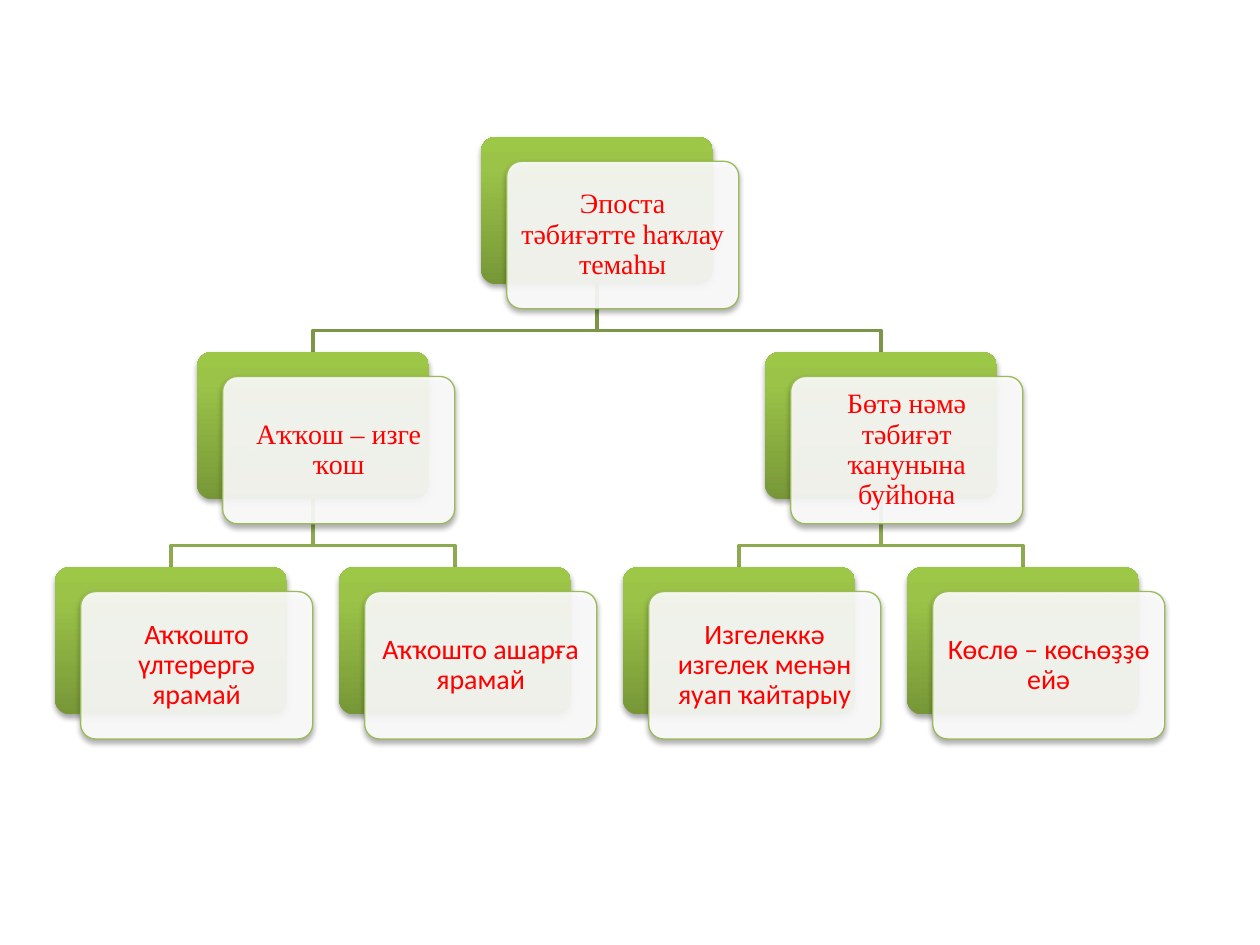
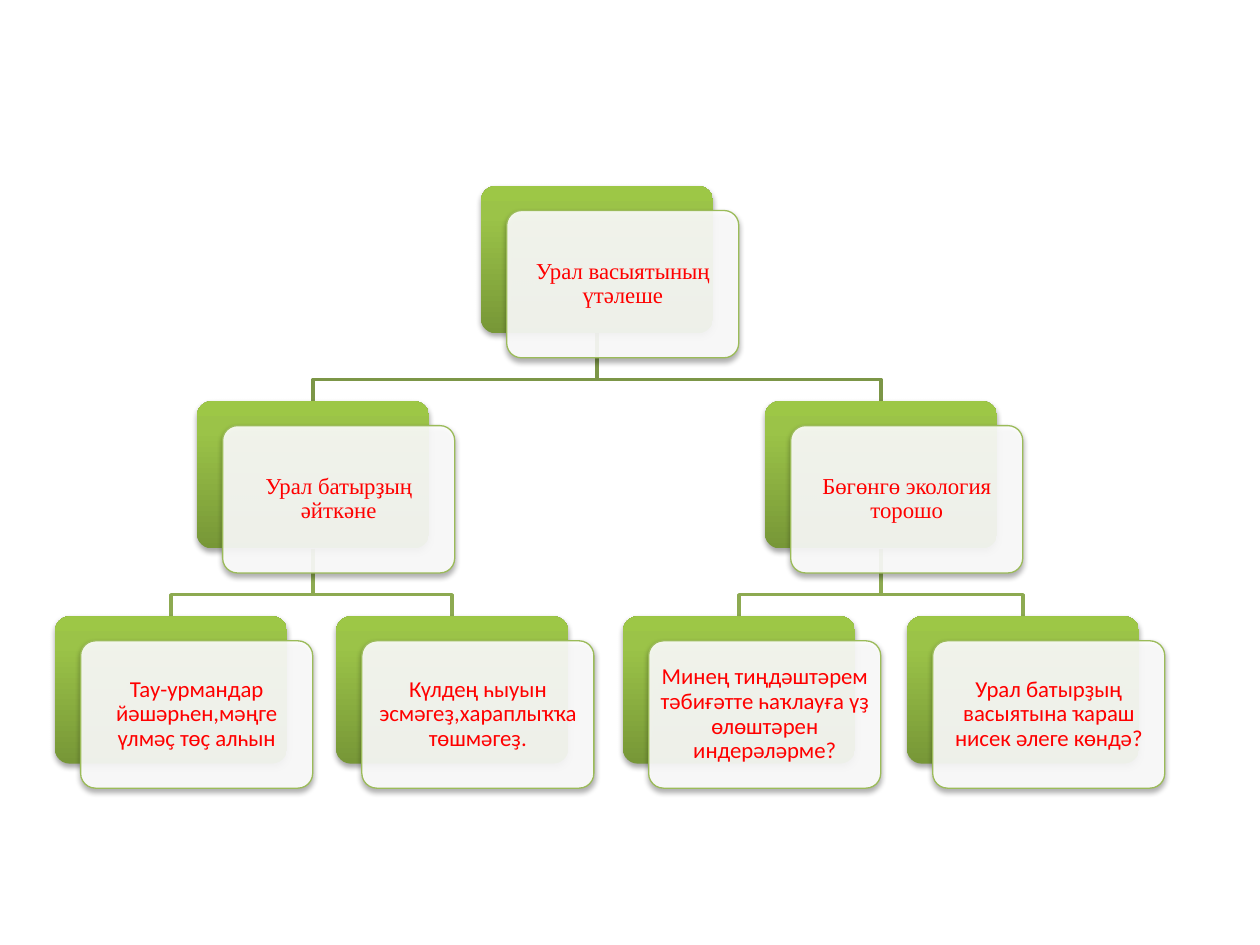
from lxml.etree import SubElement
from pptx import Presentation
from pptx.dml.color import RGBColor
from pptx.enum.shapes import MSO_SHAPE
from pptx.enum.text import MSO_ANCHOR, PP_ALIGN
from pptx.oxml.ns import qn
from pptx.util import Pt

ROUNDED = MSO_SHAPE.ROUNDED_RECTANGLE
MIDDLE = MSO_ANCHOR.MIDDLE
CENTER = PP_ALIGN.CENTER

CARD_WIDTH, CARD_HEIGHT = 132.6, 84.2
SLOT_PITCH, ROW_PITCH = 162.3, 122.95
FRONT_SHIFT_X, FRONT_SHIFT_Y = 14.7, 14
BEND_DROP = 26.4
TREE_LEFT = 31.4

GREEN_STOPS = ((0, "779737"), (80, "9BC348"), (100, "9DC746"))
FRONT_FILL, FRONT_LINE = "FFFFFF", "9BBB59"
TEXT_COLOR, SHADOW_COLOR = "FF0000", "000000"
ROW_LINE_COLORS = ("7C9647", "8DAA51")
ROW_FONTS = ("Times New Roman", "Times New Roman", "Calibri")
PARENT_SLOTS = {1: (1.5, 1.5), 2: (0.5, 0.5, 2.5, 2.5)}

TREES = (
    {
        "top": 78.2,
        "size": 16,
        "slots": ((1.5,), (0.5, 2.5), (0, 1, 2, 3)),
        "rows": (
            ("Эпоста тәбиғәтте һаҡлау темаһы",),
            ("Аҡҡош – изге ҡош", "Бөтә нәмә тәбиғәт ҡанунына буйһона"),
            (
                "Аҡҡошто үлтерергә ярамай",
                "Аҡҡошто ашарға ярамай",
                "Изгелеккә изгелек менән яуап ҡайтарыу",
                "Көслө – көсһөҙҙө ейә",
            ),
        ),
    },
    {
        "top": 106.3,
        "size": 13,
        "slots": ((1.5,), (0.5, 2.5), (0, 0.99, 2, 3)),
        "rows": (
            ("Урал васыятының үтәлеше",),
            ("Урал батырҙың әйткәне", "Бөгөнгө экология торошо"),
            (
                "Тау-урмандар йәшәрһен,мәңге үлмәҫ төҫ алһын",
                "Күлдең һыуын эсмәгеҙ,хараплыҡҡа төшмәгеҙ.",
                "Минең тиңдәштәрем тәбиғәтте һаҡлауға үҙ өлөштәрен индерәләрме?",
                "Урал батырҙың васыятына ҡараш нисек әлеге көндә?",
            ),
        ),
    },
)


def color(value):
    """Turn a hex string into a colour."""
    return RGBColor.from_string(value)


def add_shadow(shape):
    """Give a shape the soft shadow that falls below it."""
    shape.shadow.inherit = False
    effects = shape._element.spPr.find(qn("a:effectLst"))
    shadow = SubElement(effects, qn("a:outerShdw"), blurRad=str(Pt(3.15)),
                        dist=str(Pt(1.8)), dir="5400000", rotWithShape="0")
    shade = SubElement(shadow, qn("a:srgbClr"), val=SHADOW_COLOR)
    SubElement(shade, qn("a:alpha"), val="35000")


def fill_gradient(shape, stops):
    """Fill a shape with colour stops that run from bottom to top."""
    shape.fill.gradient()
    shape.fill.gradient_angle = 90
    stop_list = shape._element.spPr.find(".//" + qn("a:gsLst"))
    for stop in list(stop_list):
        stop_list.remove(stop)
    for percent, value in stops:
        stop = SubElement(stop_list, qn("a:gs"), pos=str(percent * 1000))
        SubElement(stop, qn("a:srgbClr"), val=value)


def add_panel(page, left, top):
    """Add one rounded, shadowed rectangle of card size."""
    panel = page.shapes.add_shape(ROUNDED, Pt(left), Pt(top), Pt(CARD_WIDTH), Pt(CARD_HEIGHT))
    panel.adjustments[0] = 0.1
    add_shadow(panel)
    return panel


def write_text(shape, text, *, size, font, value):
    """Write centred text into a shape, with margins that follow its size."""
    frame = shape.text_frame
    frame.word_wrap = True
    frame.vertical_anchor = MIDDLE
    frame.margin_left = frame.margin_right = Pt(size * 0.3)
    frame.margin_top = frame.margin_bottom = Pt(size * 0.3)
    para = frame.paragraphs[0]
    para.alignment = CENTER
    para.line_spacing = 0.9
    span = para.add_run()
    span.text = text
    span.font.size = Pt(size)
    span.font.name = font
    span.font.color.rgb = color(value)


def add_card(page, left, top, text, size, font):
    """Add a green back panel with a translucent text panel over it."""
    back = add_panel(page, left, top)
    fill_gradient(back, GREEN_STOPS)
    back.line.fill.background()
    front = add_panel(page, left + FRONT_SHIFT_X, top + FRONT_SHIFT_Y)
    front.fill.solid()
    front.fill.fore_color.rgb = color(FRONT_FILL)
    shade = front._element.spPr.find(qn("a:solidFill")).find(qn("a:srgbClr"))
    SubElement(shade, qn("a:alpha"), val="90000")
    front.line.color.rgb = color(FRONT_LINE)
    front.line.width = Pt(0.75)
    write_text(front, text, size=size, font=font, value=TEXT_COLOR)


def add_branch(page, start_x, start_y, end_x, end_y, value):
    """Draw a bent line from a parent card down to a child card."""
    bend_y = start_y + BEND_DROP
    builder = page.shapes.build_freeform(Pt(start_x), Pt(start_y))
    corners = ((start_x, bend_y), (end_x, bend_y), (end_x, end_y))
    builder.add_line_segments([(Pt(x), Pt(y)) for x, y in corners], close=False)
    branch = builder.convert_to_shape()
    branch.shadow.inherit = False
    branch.fill.background()
    branch.line.color.rgb = color(value)
    branch.line.width = Pt(2)


def add_tree(page, left, top, tree):
    """Draw the branches and then the cards of a three-row tree."""
    center = left + CARD_WIDTH / 2
    for row, parents in PARENT_SLOTS.items():
        row_top = top + row * ROW_PITCH
        for parent, child in zip(parents, tree["slots"][row]):
            add_branch(page, center + parent * SLOT_PITCH, row_top - ROW_PITCH + CARD_HEIGHT,
                       center + child * SLOT_PITCH, row_top, ROW_LINE_COLORS[row - 1])
    for row, (slots, texts) in enumerate(zip(tree["slots"], tree["rows"])):
        for slot, text in zip(slots, texts):
            add_card(page, left + slot * SLOT_PITCH, top + row * ROW_PITCH,
                     text, tree["size"], ROW_FONTS[row])


def main():
    """Build the deck with one tree on each page."""
    deck = Presentation()
    deck.slide_width, deck.slide_height = Pt(720), Pt(540)
    for tree in TREES:
        page = deck.slides.add_slide(deck.slide_layouts[6])
        add_tree(page, TREE_LEFT, tree["top"], tree)
    deck.save("out.pptx")


if __name__ == "__main__":
    main()
